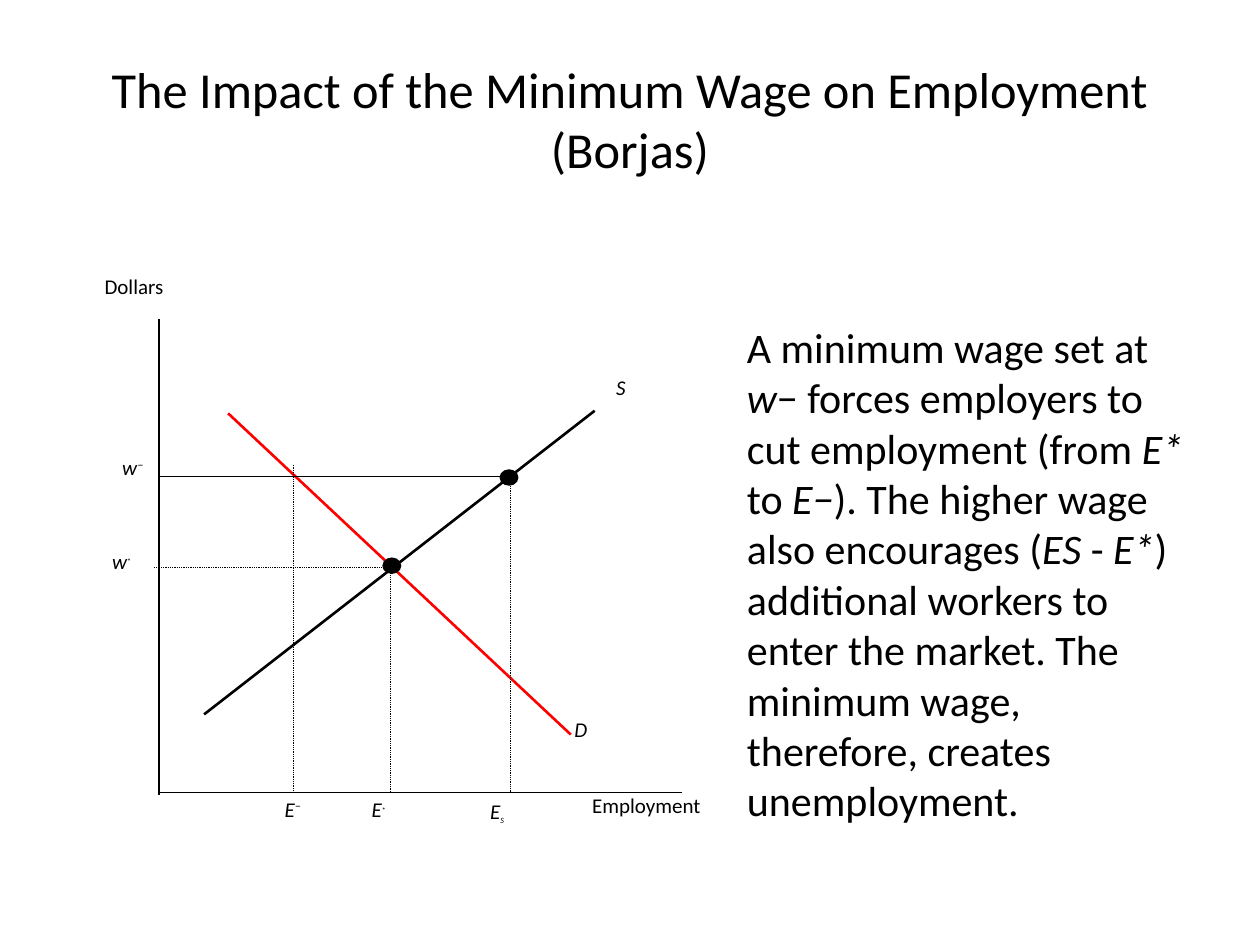
from lxml import etree
from pptx import Presentation
from pptx.dml.color import RGBColor
from pptx.enum.dml import MSO_LINE
from pptx.enum.shapes import MSO_CONNECTOR, MSO_SHAPE
from pptx.enum.text import MSO_ANCHOR, PP_ALIGN
from pptx.oxml.ns import qn
from pptx.util import Inches, Pt

STRAIGHT = MSO_CONNECTOR.STRAIGHT
OVAL = MSO_SHAPE.OVAL
DOTTED = MSO_LINE.ROUND_DOT
LEFT, CENTER = PP_ALIGN.LEFT, PP_ALIGN.CENTER
TOP, MIDDLE = MSO_ANCHOR.TOP, MSO_ANCHOR.MIDDLE

COLORS = {"ink": "000000", "demand": "FF0000", "paper": "FFFFFF"}
FONT = "Calibri"

TITLE = [("The Impact of the Minimum Wage on Employment\n(Borjas)", {})]
ITALIC = {"italic": True}
EXPLANATION = [
    ("A minimum wage set at ", {}),
    ("w", ITALIC),
    ("− forces employers to cut employment (from ", {}),
    ("E*", ITALIC),
    (" to ", {}),
    ("E−", ITALIC),
    ("). The higher wage also encourages (", {}),
    ("ES", ITALIC),
    (" - ", {}),
    ("E*", ITALIC),
    (") additional workers to enter the market. "
     "The minimum wage, therefore, creates unemployment.", {}),
]

STAR = ("*", {"size": 8, "baseline": 30})
MINUS = ("−", {"italic": True, "baseline": 30})
SUPPLIED = ("S", {"italic": True, "size": 8, "baseline": -25})
LABELS = [
    ((0.83, 2.17, 0.9, 0.34), [("Dollars", {})]),
    ((4.7, 6.29, 1.64, 0.34), [("Employment", {})]),
    ((4.89, 2.97, 0.46, 0.29), [("S", ITALIC)]),
    ((4.56, 5.69, 0.46, 0.29), [("D", ITALIC)]),
    ((0.89, 4.35, 0.44, 0.4), [("w", ITALIC), STAR]),
    ((0.97, 3.61, 0.29, 0.4), [("w", ITALIC), MINUS]),
    ((3.89, 6.34, 0.44, 0.4), [("E", ITALIC), SUPPLIED]),
    ((2.95, 6.32, 0.44, 0.4), [("E", ITALIC), STAR]),
    ((2.26, 6.32, 0.44, 0.4), [("E", ITALIC), MINUS]),
]

AXIS_X, AXIS_Y = 1.26, 6.29
MINIMUM_WAGE, MARKET_WAGE = 3.78, 4.5
JOBS_AT_MINIMUM, JOBS_AT_MARKET, JOBS_SUPPLIED = 2.33, 3.1, 4.05

CURVES = [
    ((1.62, 5.67), (4.72, 3.26), "ink", 1.5, None),
    ((AXIS_X, AXIS_Y), (5.41, AXIS_Y), "ink", 1, None),
    ((AXIS_X, 2.53), (AXIS_X, 6.31), "ink", 1, None),
    ((1.81, 3.28), (4.53, 5.83), "demand", 1.5, None),
]
GUIDES = [
    ((JOBS_AT_MARKET, MARKET_WAGE), (1.22, MARKET_WAGE), "ink", 0.5, DOTTED),
    ((1.27, MINIMUM_WAGE), (4.08, MINIMUM_WAGE), "ink", 0.75, None),
    ((JOBS_AT_MARKET, 4.48), (JOBS_AT_MARKET, AXIS_Y), "ink", 0.5, DOTTED),
    ((JOBS_AT_MINIMUM, 3.69), (JOBS_AT_MINIMUM, AXIS_Y), "ink", 0.5, DOTTED),
    ((JOBS_SUPPLIED, 3.8), (JOBS_SUPPLIED, AXIS_Y), "ink", 0.5, DOTTED),
]
POINTS = [(3.11, 4.49), (4.04, 3.79)]
POINT_WIDTH, POINT_HEIGHT = 0.14, 0.12


def color(name):
    return RGBColor.from_string(COLORS[name])


def write(frame, pieces, size=12, align=LEFT, anchor=TOP, margins=(0, 0)):
    frame.word_wrap = True
    frame.vertical_anchor = anchor
    frame.margin_left = frame.margin_right = Inches(margins[0])
    frame.margin_top = frame.margin_bottom = Inches(margins[1])
    paragraph = frame.paragraphs[0]
    paragraph.alignment = align
    for text, style in pieces:
        for number, line in enumerate(text.split("\n")):
            if number:
                paragraph.add_line_break()
            run = paragraph.add_run()
            run.text = line
            run.font.name = FONT
            run.font.size = Pt(style.get("size", size))
            run.font.italic = style.get("italic", False)
            run.font.color.rgb = color("ink")
            if "baseline" in style:
                run.font._element.set("baseline", str(style["baseline"] * 1000))


def add_line(slide, start, end, ink, width, dash):
    line = slide.shapes.add_connector(STRAIGHT, *map(Inches, start + end))
    line.line.color.rgb = color(ink)
    line.line.width = Pt(width)
    if dash is not None:
        line.line.dash_style = dash
    etree.SubElement(line._element.spPr, qn("a:effectLst"))


def add_text(slide, box, pieces, **style):
    write(slide.shapes.add_textbox(*map(Inches, box)).text_frame, pieces, **style)


def add_point(slide, x, y):
    box = (x - POINT_WIDTH / 2, y - POINT_HEIGHT / 2, POINT_WIDTH, POINT_HEIGHT)
    point = slide.shapes.add_shape(OVAL, *map(Inches, box))
    point.shadow.inherit = False
    point.fill.solid()
    point.fill.fore_color.rgb = color("ink")
    point.line.color.rgb = color("ink")


def main():
    deck = Presentation()
    deck.slide_width, deck.slide_height = Inches(10), Inches(7.5)
    slide = deck.slides.add_slide(deck.slide_layouts[5])

    title = slide.shapes.title
    title.left, title.top = Inches(0.5), Inches(0.42)
    title.width, title.height = Inches(9), Inches(1.04)
    title.fill.solid()
    title.fill.fore_color.rgb = color("paper")
    write(title.text_frame, TITLE, size=28.8, align=CENTER, anchor=MIDDLE,
          margins=(0.1, 0.05))

    for curve in CURVES:
        add_line(slide, *curve)
    for box, pieces in LABELS:
        add_text(slide, box, pieces)
    for guide in GUIDES:
        add_line(slide, *guide)
    for x, y in POINTS:
        add_point(slide, x, y)
    add_text(slide, (5.83, 2.5, 3.67, 4.09), EXPLANATION, size=24,
             margins=(0.1, 0.05))

    deck.save("out.pptx")


if __name__ == "__main__":
    main()
